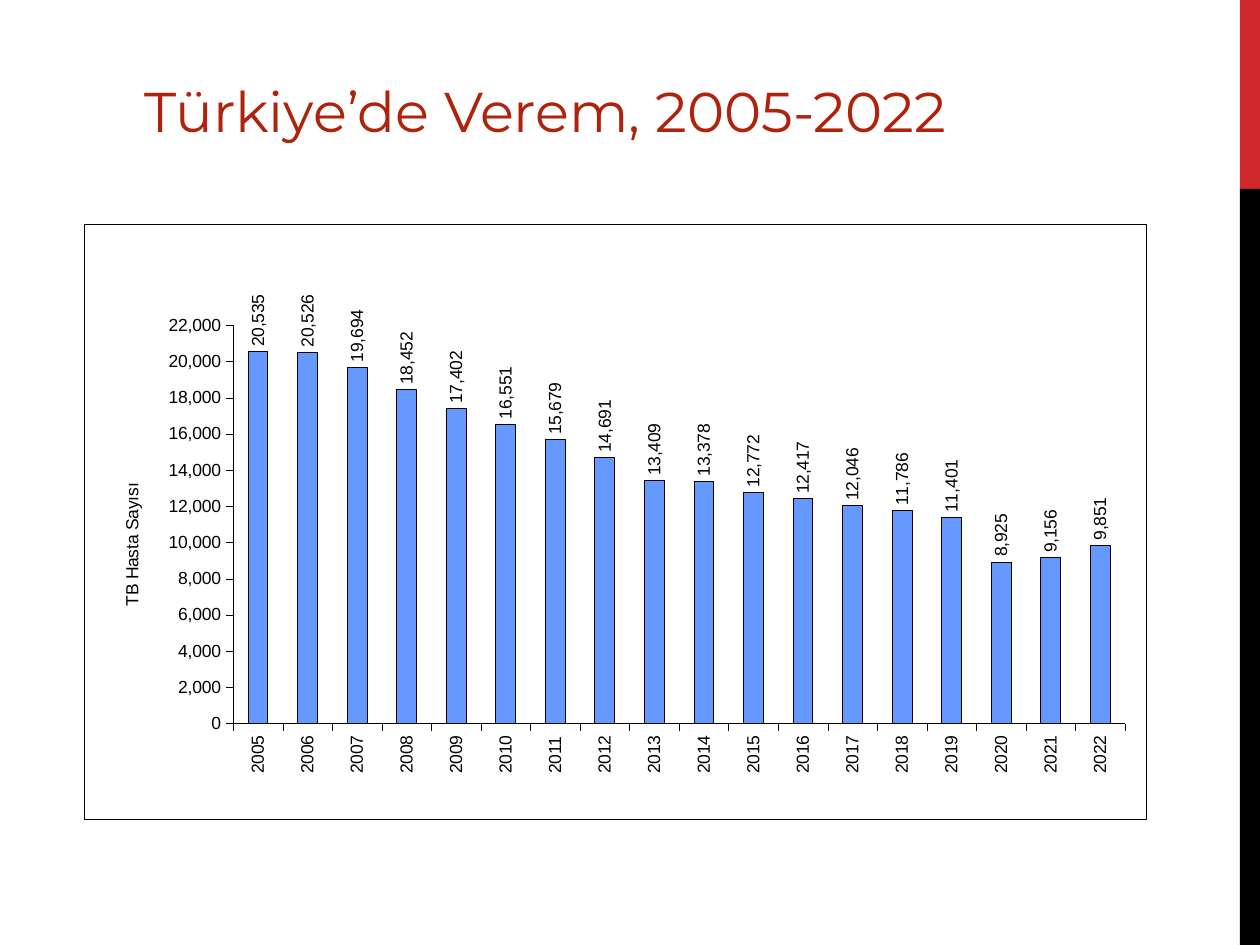
from lxml import etree
from pptx import Presentation
from pptx.chart.data import CategoryChartData
from pptx.dml.color import RGBColor
from pptx.enum.chart import XL_CHART_TYPE, XL_LABEL_POSITION, XL_TICK_MARK
from pptx.enum.shapes import MSO_SHAPE
from pptx.enum.text import PP_ALIGN
from pptx.oxml import parse_xml
from pptx.oxml.ns import nsdecls, qn
from pptx.util import Inches, Pt

COLUMN = XL_CHART_TYPE.COLUMN_CLUSTERED
OUTER = XL_LABEL_POSITION.OUTSIDE_END
OUT, NONE = XL_TICK_MARK.OUTSIDE, XL_TICK_MARK.NONE
RECT = MSO_SHAPE.RECTANGLE
CENTER = PP_ALIGN.CENTER
COLORS = {"red": "D1282E", "black": "000000", "white": "FFFFFF",
          "title": "AF220B", "bar": "6699FF"}
CASES = [20535, 20526, 19694, 18452, 17402, 16551, 15679, 14691, 13409,
         13378, 12772, 12417, 12046, 11786, 11401, 8925, 9156, 9851]
UPRIGHT = "-5400000"


def rgb(name):
    return RGBColor.from_string(COLORS[name])


def set_line(line, name, width):
    line.color.rgb = rgb(name)
    line.width = Pt(width)


prs = Presentation()
prs.slide_width, prs.slide_height = Inches(10), Inches(7.5)
slide = prs.slides.add_slide(prs.slide_layouts[6])

for top, height, name in [(0, 1.5, "red"), (1.5, 6, "black")]:
    band = slide.shapes.add_shape(RECT, Inches(9.84), Inches(top), Inches(0.16), Inches(height))
    band.shadow.inherit = False
    band.fill.solid()
    band.fill.fore_color.rgb = rgb(name)
    band.line.fill.background()

title = slide.shapes.add_textbox(Inches(0.67), Inches(0.56), Inches(7.32), Inches(0.64))
title.text_frame.word_wrap = True
title.text_frame.text = "Türkiye’de Verem, 2005-2022"
para = title.text_frame.paragraphs[0]
para.alignment = CENTER
font = para.runs[0].font
font.name, font.size, font.color.rgb = "Montserrat", Pt(32), rgb("title")

data = CategoryChartData(number_format="#,##0")
data.categories = [str(2005 + i) for i in range(len(CASES))]
data.add_series("TB Hasta Sayısı", CASES)
chart = slide.shapes.add_chart(
    COLUMN, Inches(0.67), Inches(1.78), Inches(8.43), Inches(4.72), data).chart
chart.has_title = False
chart.has_legend = False
chart.font.name, chart.font.size, chart.font.color.rgb = "Arial", Pt(10), rgb("black")

plot = chart.plots[0]
plot.gap_width = 150
plot.vary_by_categories = False
bars = plot.series[0]
bars.format.fill.solid()
bars.format.fill.fore_color.rgb = rgb("bar")
set_line(bars.format.line, "black", 0.5)

labels = bars.data_labels
labels.show_value = True
labels.position = OUTER
labels.number_format = "#,##0"
labels.number_format_is_linked = False

years, count = chart.category_axis, chart.value_axis
for axis in (years, count):
    axis.major_tick_mark, axis.minor_tick_mark = OUT, NONE
    set_line(axis.format.line, "black", 0.25)
count.minimum_scale, count.maximum_scale = 0, 22000
count.major_unit = 2000
count.tick_labels.number_format = "#,##0"
count.tick_labels.number_format_is_linked = False
set_line(count.major_gridlines.format.line, "white", 0.25)

frame = count.axis_title.text_frame
frame.text = "TB Hasta Sayısı"
head = frame.paragraphs[0].runs[0].font
head.name, head.size, head.bold, head.color.rgb = "Arial", Pt(10), False, rgb("black")

for item in (labels, years.tick_labels):
    item.font.name, item.font.size, item.font.color.rgb = "Arial", Pt(10), rgb("black")
for part in (labels._element, years._element):
    body = part.find(qn("c:txPr")).find(qn("a:bodyPr"))
    body.set("rot", UPRIGHT)
    body.set("vert", "horz")

fill = f'<a:solidFill><a:srgbClr val="{COLORS["white"]}"/></a:solidFill>'
edge = (f'<a:ln w="{Pt(0.25)}"><a:solidFill><a:srgbClr val="{COLORS["black"]}"/>'
        '</a:solidFill></a:ln>')
names = nsdecls("c", "a")
root = chart._chartSpace
root.find(qn("c:chart")).addnext(parse_xml(f"<c:spPr {names}>{fill}{edge}</c:spPr>"))

area = root.find(qn("c:chart")).find(qn("c:plotArea"))
for old in area.findall(qn("c:layout")):
    area.remove(old)
layout = etree.Element(qn("c:layout"))
manual = etree.SubElement(layout, qn("c:manualLayout"))
for tag, val in [("layoutTarget", "inner"), ("xMode", "edge"), ("yMode", "edge"),
                 ("x", "0.14"), ("y", "0.17"), ("w", "0.84"), ("h", "0.67")]:
    etree.SubElement(manual, qn(f"c:{tag}")).set("val", val)
area.insert(0, layout)
area.append(parse_xml(f"<c:spPr {names}>{fill}</c:spPr>"))

prs.save("out.pptx")
